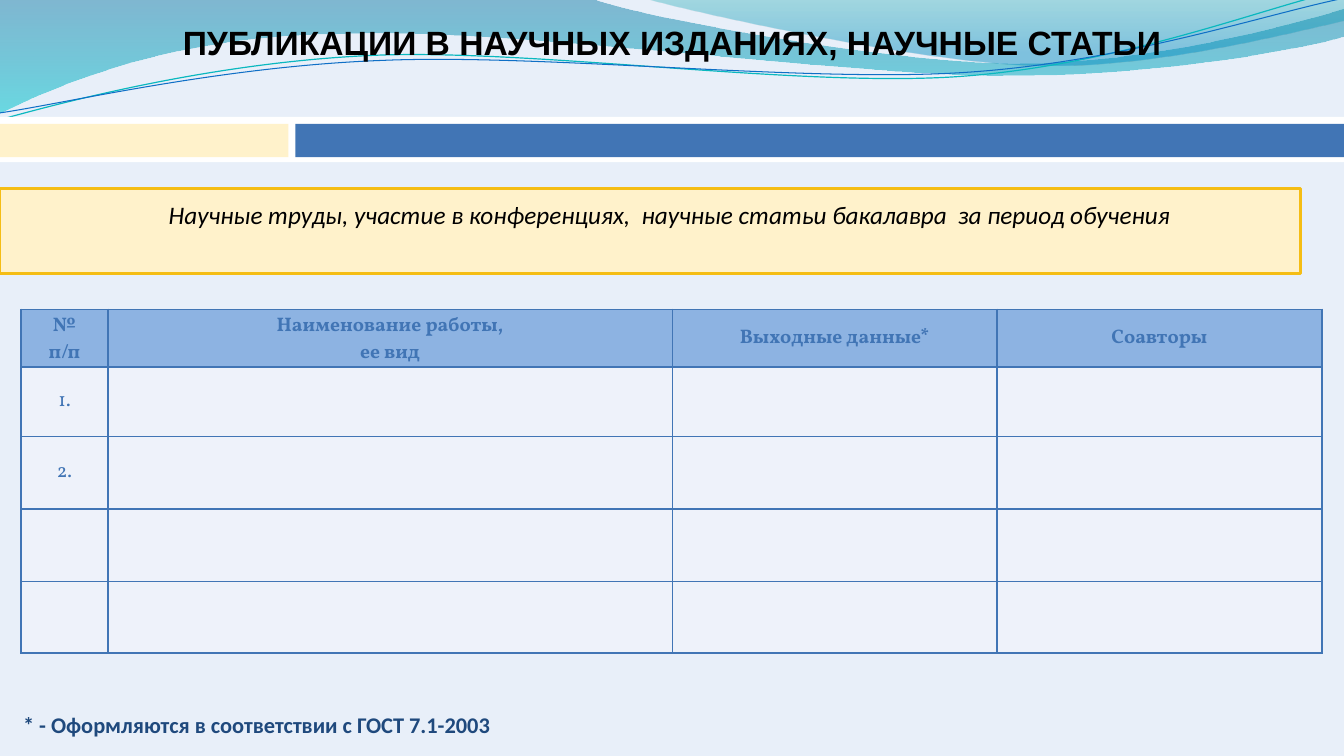
import math
from lxml import etree
from pptx import Presentation
from pptx import util as u
from pptx.dml.color import RGBColor
from pptx.enum import shapes, text
from pptx.oxml.ns import qn

BLUE, CREAM = "4175B5", "FFF2CB"
WAVES = [
    ([("L", 0, -0.01), ("L", 5.87, -0.01),
      ("C", 6.34, 0.17, 8.85, 0.63, 10.11, 0.63),
      ("C", 11.38, 0.63, 12.78, 0.26, 13.33, 0.09), ("L", 13.35, 0.36),
      ("C", 13.11, 0.44, 11.6, 0.76, 9.94, 0.75),
      ("C", 8.29, 0.75, 5.09, 0.28, 3.43, 0.34),
      ("C", 1.72, 0.35, 0.61, 0.83, -0.01, 1.13)],
     [(0, "0074A1", 45), (1, "00C6CF", 55)]),
    ([("L", 6.39, -0.01), ("C", 6.79, 0.11, 9.09, 0.62, 10.25, 0.65),
      ("C", 11.41, 0.69, 12.82, 0.32, 13.33, 0.21), ("L", 13.33, 0)],
     [(0, "00A1A9", 30), (0.8, "008BBF", 45)]),
]
TURN = 357.3
CURVES = [
    ([("L", -0.01, 1.19), ("C", 0.64, 1.01, 2.11, 0.62, 3.69, 0.55),
      ("C", 5.27, 0.48, 7.9, 0.87, 9.5, 0.76),
      ("C", 11.1, 0.65, 12.52, 0.08, 13.31, -0.1)],
     (6.65, 0.57), "0AB8BF", 0.85),
    ([("L", 0, 1.12), ("C", 0.63, 1.03, 2.18, 0.66, 3.78, 0.6),
      ("C", 5.37, 0.53, 7.96, 0.82, 9.55, 0.72),
      ("C", 11.15, 0.62, 12.55, 0.14, 13.34, -0.02)],
     (6.67, 0.59), "0F6FC6", 0.75),
]
BARS = [
    ((0, 1.16, 13.33, 0.45), "FFFFFF", None),
    ((2.93, 1.23, 10.4, 0.33), BLUE, None),
    ((0, 1.23, 2.86, 0.33), CREAM, None),
    ((0, 1.87, 12.9, 0.84), CREAM, "F5BD14"),
]
MID, LEFT = text.PP_ALIGN.CENTER, text.PP_ALIGN.LEFT
LABELS = [
    ("ПУБЛИКАЦИИ В НАУЧНЫХ ИЗДАНИЯХ, НАУЧНЫЕ СТАТЬИ",
     (1.67, 0.17, 9.99, 0.5), False, MID, ("Arial", 24, "000000", True, False)),
    ("Научные труды, участие в конференциях,  научные статьи бакалавра  за период обучения ",
     (0.42, 1.93, 12.5, 0.4), True, MID, ("Calibri", 18, "000000", False, True)),
    ("* - Оформляются в соответствии с ГОСТ 7.1-2003",
     (0.13, 7.01, 4.95, 0.37), False, LEFT, ("Calibri", 16, "1F497D", True, False)),
]
ROWS = [
    [["№", "п/п"], ["Наименование работы,", "ее вид"],
     ["Выходные данные*"], ["Соавторы"]],
    [["1."], [], [], []],
    [["2."], [], [], []],
    [[], [], [], []],
    [[], [], [], []],
]
WIDE = [0.86, 5.6, 3.22, 3.22]
HIGH = [0.57, 0.69, 0.72, 0.72, 0.71]


def rgb(code):
    return RGBColor.from_string(code)


def box(rect):
    return [u.Inches(n) for n in rect]


def paint(fill, code):
    fill.solid()
    fill.fore_color.rgb = rgb(code)


def write(par, words, align, look):
    par.alignment = align
    run = par.add_run()
    run.text = words
    font = run.font
    font.name, size, code, font.bold, font.italic = look
    font.size = u.Pt(size)
    font.color.rgb = rgb(code)


def level(steps, mid):
    angle = math.radians(360 - TURN)
    cos, sin = math.cos(angle), math.sin(angle)
    flat = []
    for kind, *nums in steps:
        step = [kind]
        for x, y in zip(nums[::2], nums[1::2]):
            dx, dy = x - mid[0], y - mid[1]
            step += [mid[0] + dx * cos - dy * sin, mid[1] + dx * sin + dy * cos]
        flat.append(step)
    return flat


def outline(slide, steps, close):
    dots = [box(step[-2:]) for step in steps]
    pen = slide.shapes.build_freeform(*dots[0])
    pen.add_line_segments(dots[1:], close=close)
    shape = pen.convert_to_shape()
    shape.shadow.inherit = False
    parts = list(shape.element.spPr.iter(qn("a:lnTo")))
    for part, (kind, *nums) in zip(parts, steps[1:]):
        if kind == "C":
            part.tag = qn("a:cubicBezTo")
            for i in (0, 1):
                x, y = box(nums[2 * i:2 * i + 2])
                dot = etree.Element(qn("a:pt"), x=str(x - shape.left), y=str(y - shape.top))
                part.insert(i, dot)
    return shape


def wave(slide, steps, stops):
    shape = outline(slide, steps, True)
    shape.line.fill.background()
    shape.fill.gradient()
    shape.fill.gradient_angle = 270
    for stop, (place, code, alpha) in zip(shape.fill.gradient_stops, stops):
        stop.position = place
        stop.color.rgb = rgb(code)
    tags = shape.element.spPr.iter(qn("a:srgbClr"))
    for tag, (place, code, alpha) in zip(tags, stops):
        etree.SubElement(tag, qn("a:alpha"), val=str(alpha * 1000))


def curve(slide, steps, mid, code, size):
    shape = outline(slide, level(steps, mid), False)
    shape.rotation = TURN
    shape.fill.background()
    shape.line.color.rgb = rgb(code)
    shape.line.width = u.Pt(size)


def bar(slide, rect, code, edge):
    shape = slide.shapes.add_shape(shapes.MSO_SHAPE.RECTANGLE, *box(rect))
    shape.shadow.inherit = False
    paint(shape.fill, code)
    if edge:
        shape.line.color.rgb = rgb(edge)
        shape.line.width = u.Pt(2)
    else:
        shape.line.fill.background()


def label(slide, words, rect, wrap, align, look):
    frame = slide.shapes.add_textbox(*box(rect)).text_frame
    frame.word_wrap = wrap
    write(frame.paragraphs[0], words, align, look)


def border(cell):
    props = cell._tc.get_or_add_tcPr()
    for side in ("lnL", "lnR", "lnT", "lnB"):
        line = etree.SubElement(props, qn("a:" + side), w=str(u.Pt(1.5)))
        fill = etree.SubElement(line, qn("a:solidFill"))
        etree.SubElement(fill, qn("a:srgbClr"), val=BLUE)


def grid(slide):
    rect = box((0.21, 3.07, sum(WIDE), sum(HIGH)))
    table = slide.shapes.add_table(len(ROWS), len(WIDE), *rect).table
    for col, size in zip(table.columns, WIDE):
        col.width = u.Inches(size)
    for r, row in enumerate(ROWS):
        table.rows[r].height = u.Inches(HIGH[r])
        look = ("Vollkorn", 14, BLUE, r == 0, False)
        for c, lines in enumerate(row):
            cell = table.cell(r, c)
            border(cell)
            paint(cell.fill, "EEF2FA" if r else "8DB3E2")
            cell.vertical_anchor = text.MSO_ANCHOR.MIDDLE
            if len(lines) > 1:
                cell.margin_top, cell.margin_bottom = box((0.03, 0))
            for i, words in enumerate(lines):
                frame = cell.text_frame
                par = frame.add_paragraph() if i else frame.paragraphs[0]
                write(par, words, MID, look)


def main():
    deck = Presentation()
    deck.slide_width, deck.slide_height = box((13.33, 7.5))
    slide = deck.slides.add_slide(deck.slide_layouts[6])
    paint(slide.background.fill, "E8EFF9")
    for draw, items in ((wave, WAVES), (curve, CURVES), (bar, BARS), (label, LABELS)):
        for item in items:
            draw(slide, *item)
    grid(slide)
    deck.save("out.pptx")


if __name__ == "__main__":
    main()
